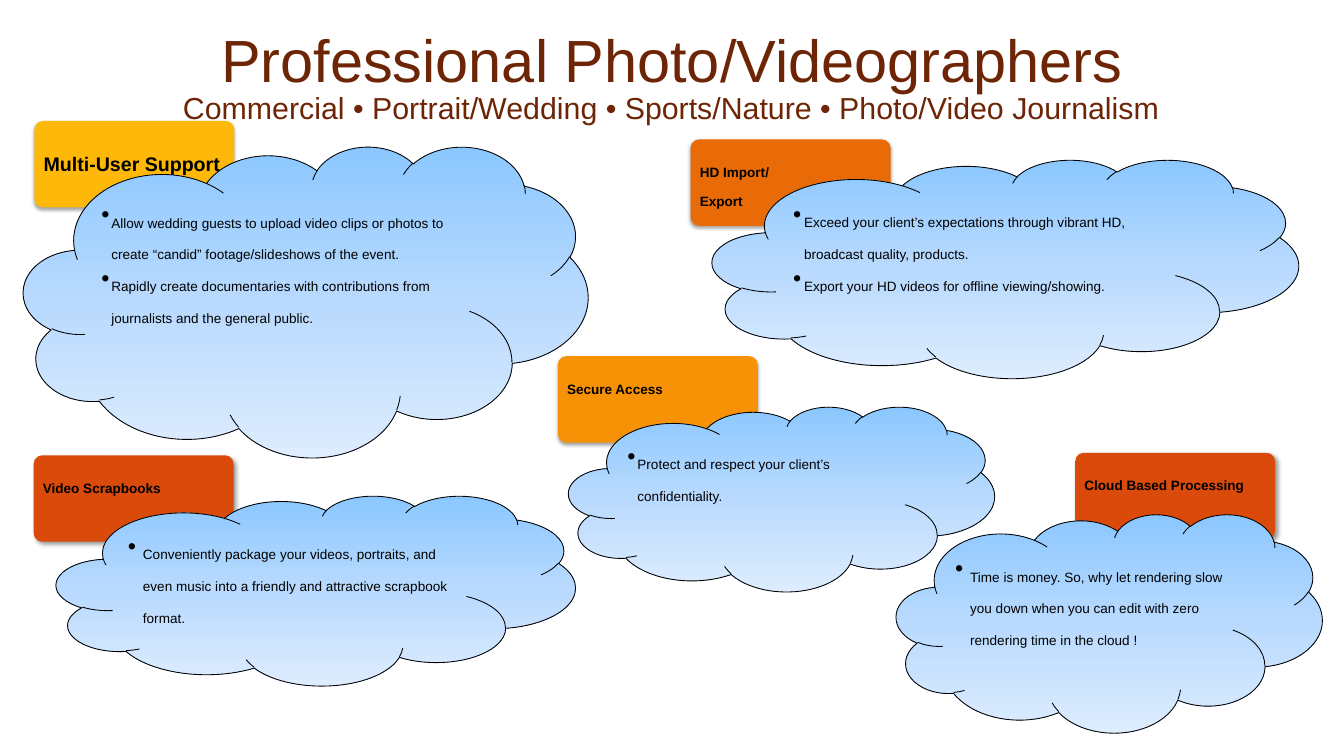
import copy

import pptx
import pptx.dml.color
import pptx.enum.shapes
import pptx.enum.text
import pptx.oxml
import pptx.oxml.ns
import pptx.util

RGB = pptx.dml.color.RGBColor
SHAPE = pptx.enum.shapes.MSO_SHAPE
ALIGN = pptx.enum.text.PP_ALIGN
ANCHOR = pptx.enum.text.MSO_ANCHOR
qn = pptx.oxml.ns.qn

BLACK = RGB(0x00, 0x00, 0x00)
BROWN = RGB(0x6D, 0x25, 0x06)
YELLOW = RGB(0xFE, 0xB8, 0x0A)
AMBER = RGB(0xF7, 0x91, 0x05)
ORANGE = RGB(0xE8, 0x6B, 0x08)
RED = RGB(0xD9, 0x4A, 0x0B)
SKY = [(0, RGB(0x8B, 0xC7, 0xFF)), (0.5, RGB(0xB9, 0xDA, 0xFE)),
       (1, RGB(0xDD, 0xEC, 0xFE))]

# Shadows: opacity in percent, blur and distance in points, angle in degrees
SOFT = (35, 3.1, 1.8, 90)
DEEP = (40, 4, 3, 45)

# Positions and sizes are percentages of the slide's width and height
TITLE_BOX = (5, 2.22, 90, 16.67)
TITLE = [("Professional Photo/Videographers", 51),
         ("Commercial • Portrait/Wedding • Sports/Nature • Photo/Video Journalism", 26)]
LABEL_SIZE = (14.88, 11.44)

CARDS = [
    dict(label=["Multi-User Support"], size=29, color=YELLOW, shadow=SOFT,
         at=(2.56, 16), cloud=(1.75, 19.33, 42, 41.11), indent=0.12,
         points=["Allow wedding guests to upload video clips or photos to create "
                 "“candid” footage/slideshows of the event.",
                 "Rapidly create documentaries with contributions from journalists "
                 "and the general public."]),
    dict(label=["Secure Access"], size=20, color=AMBER, shadow=SOFT,
         at=(41.5, 47.11), cloud=(42.31, 53.78, 31.69, 24.44), indent=0.12,
         points=["Protect and respect your client’s confidentiality."]),
    dict(label=["HD Import/", "Export"], size=20, color=ORANGE, shadow=SOFT,
         at=(51.38, 18.44), cloud=(53, 21.11, 43.62, 28.89), indent=0.13,
         points=["Exceed your client’s expectations through vibrant HD, broadcast "
                 "quality, products.",
                 "Export your HD videos for offline viewing/showing."]),
    dict(label=["Video Scrapbooks"], size=20, color=RED, shadow=DEEP,
         at=(2.5, 60.22), cloud=(4.19, 65.56, 38.62, 25.11), indent=0.18,
         points=["Conveniently package your videos, portraits, and even music into "
                 "a friendly and attractive scrapbook format."]),
    dict(label=["Cloud Based Processing"], size=20, color=RED, shadow=DEEP,
         at=(80, 59.89), cloud=(66.69, 68, 31.69, 28.89), indent=0.18,
         points=["Time is money. So, why let rendering slow you down when you can "
                 "edit with zero rendering time in the cloud !"]),
]

prs = pptx.Presentation()
prs.slide_width = pptx.util.Inches(16)
prs.slide_height = pptx.util.Inches(9)


def place(box):
    """Turn a box in percent of the slide into EMU lengths."""
    full = (prs.slide_width, prs.slide_height) * 2
    return [round(share * length / 100) for share, length in zip(box, full)]


def write(sp, paragraphs, color=BLACK, bold=False, align=ALIGN.LEFT,
          anchor=ANCHOR.TOP, insets=(0, 0.07, 0, 0.07), spacing=None,
          indent=None, baseline=None):
    """Fill a shape; each paragraph is a list of (text, size) lines."""
    tf = sp.text_frame
    tf.word_wrap = True
    tf.vertical_anchor = anchor
    (tf.margin_left, tf.margin_top,
     tf.margin_right, tf.margin_bottom) = map(pptx.util.Inches, insets)
    for i, lines in enumerate(paragraphs):
        p = tf.add_paragraph() if i else tf.paragraphs[0]
        p.alignment = align
        p.line_spacing = spacing
        if indent:
            pPr = p._p.get_or_add_pPr()
            pPr.set("marL", str(pptx.util.Inches(indent)))
            pPr.set("indent", str(-pptx.util.Inches(indent)))
            pPr.append(pptx.oxml.parse_xml(
                f'<a:buFont {pptx.oxml.ns.nsdecls("a")} typeface="Arial"/>'))
            pPr.append(pptx.oxml.parse_xml(
                f'<a:buChar {pptx.oxml.ns.nsdecls("a")} char="•"/>'))
        for j, (text, size) in enumerate(lines):
            if j:
                p.add_line_break()
            r = p.add_run()
            r.text = text
            r.font.name = "Arial"
            r.font.size = pptx.util.Pt(size)
            r.font.bold = bold
            r.font.color.rgb = color
            if baseline:
                r._r.get_or_add_rPr().set("baseline", str(baseline * 1000))


def add_shadow(sp, opacity, blur, distance, angle):
    sp.shadow.inherit = False
    effects = sp._element.spPr.find(qn("a:effectLst"))
    effects.append(pptx.oxml.parse_xml(
        f'<a:outerShdw {pptx.oxml.ns.nsdecls("a")} blurRad="{pptx.util.Pt(blur)}" '
        f'dist="{pptx.util.Pt(distance)}" dir="{angle * 60000}" rotWithShape="0">'
        f'<a:srgbClr val="{BLACK}"><a:alpha val="{opacity * 1000}"/></a:srgbClr>'
        '</a:outerShdw>'))


def add_label(s, card):
    box = place(card["at"] + LABEL_SIZE)
    group = s.shapes.add_group_shape()
    tab = group.shapes.add_shape(SHAPE.ROUNDED_RECTANGLE, *box)
    tab.adjustments[0] = 0.1
    tab.fill.solid()
    tab.fill.fore_color.rgb = card["color"]
    tab.line.fill.background()
    add_shadow(tab, *card["shadow"])
    write(group.shapes.add_textbox(*box),
          [[(line, card["size"]) for line in card["label"]]], bold=True,
          insets=(0.11, 0.11, 0.11, 0.06), spacing=0.9, baseline=-25)


def add_cloud(s, card):
    sp = s.shapes.add_shape(SHAPE.CLOUD, *place(card["cloud"]))
    sp.shadow.inherit = False
    sp.fill.gradient()
    sp.fill.gradient_angle = 270
    stops = sp._element.spPr.find(qn("a:gradFill")).find(qn("a:gsLst"))
    stops.insert(1, copy.deepcopy(stops[0]))
    for stop, (position, color) in zip(sp.fill.gradient_stops, SKY):
        stop.position = position
        stop.color.rgb = color
    sp.line.color.rgb = BLACK
    sp.line.width = pptx.util.Pt(0.75)
    write(sp, [[(point, 20)] for point in card["points"]],
          indent=card["indent"], baseline=-25)


def main():
    s = prs.slides.add_slide(prs.slide_layouts[6])
    write(s.shapes.add_textbox(*place(TITLE_BOX)), [TITLE], color=BROWN,
          align=ALIGN.CENTER, anchor=ANCHOR.MIDDLE,
          insets=(0.14, 0.07, 0.14, 0.07), spacing=0.85)
    for card in CARDS:
        add_label(s, card)
        add_cloud(s, card)
    prs.save("out.pptx")


if __name__ == "__main__":
    main()
